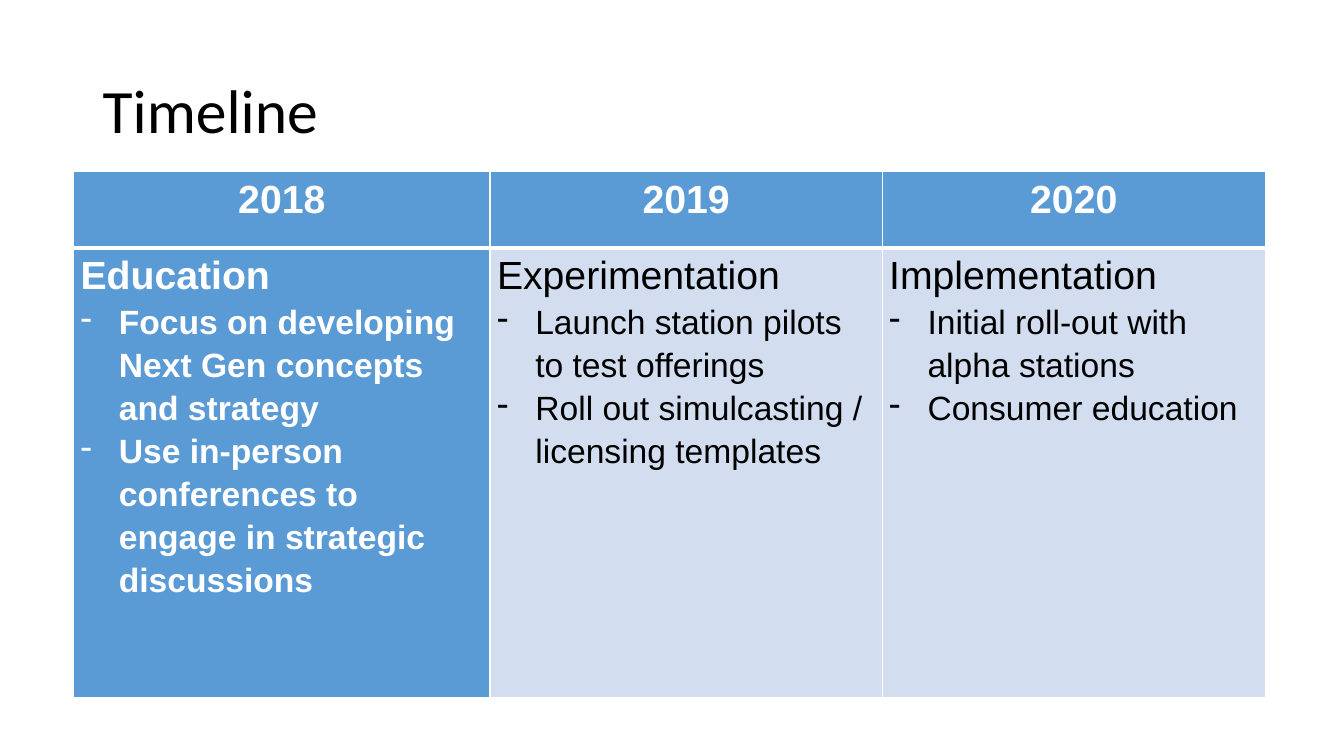
"""Build a three-year timeline slide with a table of phases."""
import pptx
import pptx.dml.color
import pptx.enum.text
import pptx.oxml
import pptx.oxml.ns
import pptx.util
from pptx.util import Inches

BLACK = pptx.dml.color.RGBColor(0x00, 0x00, 0x00)
WHITE = pptx.dml.color.RGBColor(0xFF, 0xFF, 0xFF)
BLUE = pptx.dml.color.RGBColor(0x5B, 0x9B, 0xD5)
PALE_BLUE = pptx.dml.color.RGBColor(0xD2, 0xDE, 0xEF)

CELL_FORMAT = {
    "margin_left": Inches(0.07),
    "margin_right": Inches(0.07),
    "margin_top": 0,
    "margin_bottom": 0,
}
COLUMN_WIDTHS = [4.13, 3.89, 3.8]
ROW_HEIGHTS = [0.76, 4.46]
PHASES = [
    ("2018", "Education", [
        "Focus on developing Next Gen concepts and strategy",
        "Use in-person conferences to engage in strategic discussions",
    ]),
    ("2019", "Experimentation", [
        "Launch station pilots to test offerings",
        "Roll out simulcasting / licensing templates",
    ]),
    ("2020", "Implementation", [
        "Initial roll-out with alpha stations",
        "Consumer education",
    ]),
]


def apply_format(target, values):
    """Set each named attribute on the target."""
    for attribute, value in values.items():
        setattr(target, attribute, value)


def write_line(paragraph, text, size, color, bold=False, font="Arial", spacing=1.15):
    """Write one formatted run into a paragraph."""
    paragraph.line_spacing = spacing
    run = paragraph.add_run()
    run.text = text
    apply_format(run.font, {"name": font, "size": pptx.util.Pt(size), "bold": bold})
    run.font.color.rgb = color


def add_dash(paragraph):
    """Give a paragraph a dash bullet with a hanging indent."""
    properties = paragraph._p.get_or_add_pPr()
    properties.set("marL", str(Inches(0.38)))
    properties.set("indent", str(-Inches(0.38)))
    dash = pptx.oxml.parse_xml(
        f'<a:buChar {pptx.oxml.ns.nsdecls("a")} char="-"/>')
    properties.append(dash)


def style_cell(cell, fill_color, top, bottom):
    """Set margins, white borders and fill of a cell."""
    apply_format(cell, CELL_FORMAT)
    properties = cell._tc.get_or_add_tcPr()
    for side, points in {"L": 1, "R": 1, "T": top, "B": bottom}.items():
        properties.append(pptx.oxml.parse_xml(
            f'<a:ln{side} {pptx.oxml.ns.nsdecls("a")} w="{pptx.util.Pt(points)}">'
            f'<a:solidFill><a:srgbClr val="{WHITE}"/></a:solidFill></a:ln{side}>'))
    cell.fill.solid()
    cell.fill.fore_color.rgb = fill_color


def add_title(slide, text):
    """Add the slide heading."""
    heading = slide.shapes.add_textbox(
        Inches(0.92), Inches(0.4), Inches(11.5), Inches(1.45)).text_frame
    apply_format(heading, {
        "word_wrap": True,
        "vertical_anchor": pptx.enum.text.MSO_ANCHOR.MIDDLE,
    })
    write_line(heading.paragraphs[0], text, 44, BLACK, font="Calibri", spacing=0.9)


def fill_year(cell, year):
    """Fill a header cell with its year."""
    style_cell(cell, BLUE, top=1, bottom=3)
    paragraph = cell.text_frame.paragraphs[0]
    paragraph.alignment = pptx.enum.text.PP_ALIGN.CENTER
    write_line(paragraph, year, 28, WHITE, bold=True)


def fill_phase(cell, phase, steps, highlighted):
    """Fill a body cell with a phase name and its dashed steps."""
    style_cell(cell, BLUE if highlighted else PALE_BLUE, top=3, bottom=1)
    color = WHITE if highlighted else BLACK
    write_line(cell.text_frame.paragraphs[0], phase, 28, color, highlighted)
    for step in steps:
        paragraph = cell.text_frame.add_paragraph()
        write_line(paragraph, step, 24, color, highlighted)
        add_dash(paragraph)


def add_timeline(slide):
    """Add the table with one column per year."""
    timeline = slide.shapes.add_table(
        len(ROW_HEIGHTS), len(PHASES), Inches(0.73), Inches(1.7),
        Inches(sum(COLUMN_WIDTHS)), Inches(sum(ROW_HEIGHTS))).table
    apply_format(timeline, {"first_col": True, "horz_banding": True})
    for row, height in zip(timeline.rows, ROW_HEIGHTS):
        row.height = Inches(height)
    for index, (year, phase, steps) in enumerate(PHASES):
        timeline.columns[index].width = Inches(COLUMN_WIDTHS[index])
        fill_year(timeline.cell(0, index), year)
        fill_phase(timeline.cell(1, index), phase, steps, highlighted=index == 0)


def main():
    """Create and save the presentation."""
    presentation = pptx.Presentation()
    apply_format(presentation, {
        "slide_width": Inches(13.33),
        "slide_height": Inches(7.5),
    })
    slide = presentation.slides.add_slide(presentation.slide_layouts[6])
    add_title(slide, "Timeline")
    add_timeline(slide)
    presentation.save("out.pptx")


if __name__ == "__main__":
    main()
